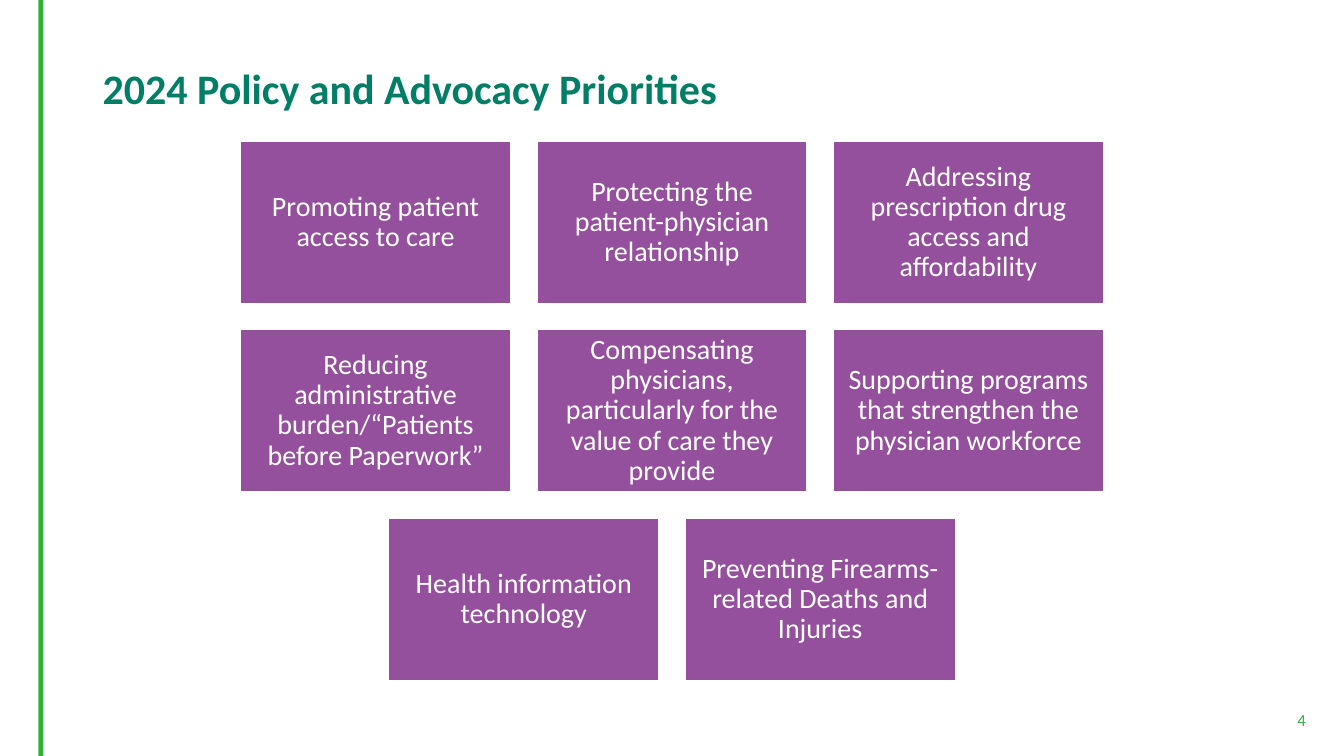
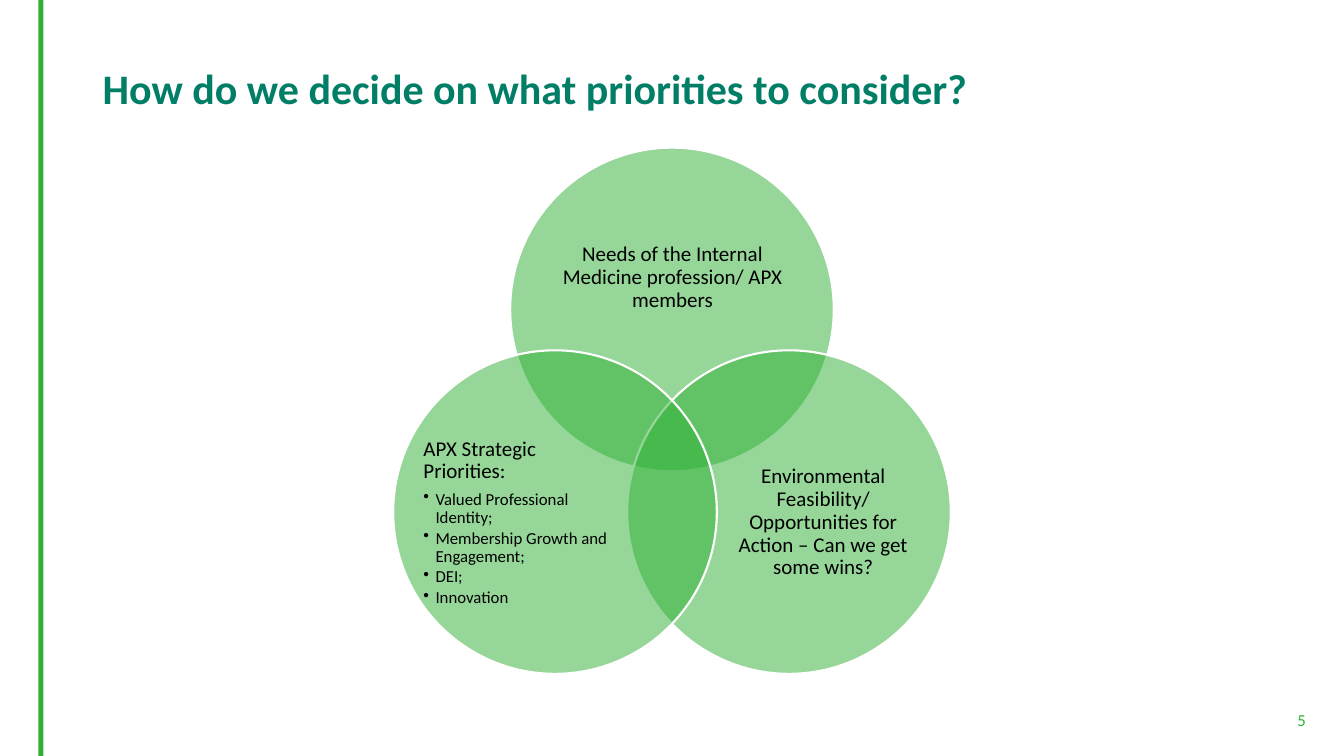
from dataclasses import dataclass
from math import cos, radians, sin

from lxml import etree
from pptx import Presentation
from pptx.dml.color import RGBColor
from pptx.enum.shapes import MSO_SHAPE
from pptx.enum.text import MSO_ANCHOR, PP_ALIGN
from pptx.oxml.ns import qn
from pptx.util import Inches, Pt

RECTANGLE, OVAL = MSO_SHAPE.RECTANGLE, MSO_SHAPE.OVAL
MIDDLE, BOTTOM = MSO_ANCHOR.MIDDLE, MSO_ANCHOR.BOTTOM
LEFT, CENTER, RIGHT = PP_ALIGN.LEFT, PP_ALIGN.CENTER, PP_ALIGN.RIGHT

SLIDE_WIDTH, SLIDE_HEIGHT = 13.33, 7.5


@dataclass(frozen=True)
class Theme:
    font: str = "Calibri"
    green: RGBColor = RGBColor(0x2E, 0xB1, 0x35)
    teal: RGBColor = RGBColor(0x00, 0x7E, 0x66)
    purple: RGBColor = RGBColor(0x95, 0x50, 0x9D)
    white: RGBColor = RGBColor(0xFF, 0xFF, 0xFF)
    black: RGBColor = RGBColor(0x00, 0x00, 0x00)
    title_size: int = 30
    card_size: int = 20
    label_size: int = 15
    small_size: int = 12
    line_spacing: float = 0.9
    label_gap: float = 0.35  # share of the type size
    bullet_gap: float = 0.15


class Deck:
    def __init__(self, theme):
        self.theme = theme
        self.presentation = Presentation()
        self.presentation.slide_width = Inches(SLIDE_WIDTH)
        self.presentation.slide_height = Inches(SLIDE_HEIGHT)
        self.slide = None

    def add_slide(self, title, number):
        """Start a slide with the side rail, title and page number."""
        theme = self.theme
        self.slide = self.presentation.slides.add_slide(self.presentation.slide_layouts[6])
        self.shape(RECTANGLE, (0.38, 0, 0.05, SLIDE_HEIGHT), theme.green)
        heading = self.text_frame((0.92, 0.4, 11.5, 1))
        self.set_text(heading.paragraphs[0], title, theme.title_size, theme.teal, bold=True)
        footer = self.text_frame((9.57, 6.99, 3.48, 0.3), anchor=BOTTOM)
        self.set_text(footer.paragraphs[0], str(number), theme.small_size, theme.green, RIGHT)

    def shape(self, kind, box, fill, line_width=0):
        shape = self.slide.shapes.add_shape(kind, *map(Inches, box))
        shape.shadow.inherit = False
        shape.fill.solid()
        shape.fill.fore_color.rgb = fill
        if line_width:
            shape.line.color.rgb = self.theme.white
            shape.line.width = Pt(line_width)
        else:
            shape.line.fill.background()
        return shape

    def text_frame(self, box, anchor=MIDDLE, inset=None):
        frame = self.slide.shapes.add_textbox(*map(Inches, box)).text_frame
        self.set_frame(frame, anchor, inset)
        return frame

    def set_frame(self, frame, anchor=MIDDLE, inset=None):
        frame.word_wrap = True
        frame.vertical_anchor = anchor
        if inset is not None:
            frame.margin_left = frame.margin_right = Inches(inset)
            frame.margin_top = frame.margin_bottom = Inches(inset)

    def set_text(self, paragraph, text, size, color, align=LEFT, bold=False, gap=0):
        paragraph.text = text
        paragraph.alignment = align
        paragraph.line_spacing = self.theme.line_spacing
        paragraph.space_after = Pt(size * gap)
        for run in paragraph.runs:
            run.font.name = self.theme.font
            run.font.size = Pt(size)
            run.font.bold = bold
            run.font.color.rgb = color

    def card(self, box, text):
        theme = self.theme
        frame = self.shape(RECTANGLE, box, theme.purple, line_width=1).text_frame
        self.set_frame(frame, inset=0.08)
        self.set_text(frame.paragraphs[0], text, theme.card_size, theme.white, CENTER)

    def circle(self, center_x, center_y, diameter):
        """Add a half-transparent circle around a centre."""
        box = (center_x - diameter / 2, center_y - diameter / 2, diameter, diameter)
        circle = self.shape(OVAL, box, self.theme.green, line_width=1.5)
        color = circle.element.spPr.find(qn("a:solidFill"))[0]
        etree.SubElement(color, qn("a:alpha"), val="50000")

    def label(self, box, text, bullets=()):
        theme = self.theme
        frame = self.text_frame(box, inset=0)
        self.set_text(frame.paragraphs[0], text, theme.label_size, theme.black,
                      LEFT if bullets else CENTER, gap=theme.label_gap if bullets else 0)
        for bullet in bullets:
            paragraph = frame.add_paragraph()
            self.set_text(paragraph, bullet, theme.small_size, theme.black, gap=theme.bullet_gap)
            properties = paragraph._p.get_or_add_pPr()
            properties.set("marL", str(Inches(0.12)))
            properties.set("indent", str(Inches(-0.12)))
            etree.SubElement(properties, qn("a:buChar"), char="•")


def build_priorities(deck):
    deck.add_slide("2024 Policy and Advocacy Priorities", 4)
    card_width, card_height, gap, top = 2.68, 1.61, 0.26, 1.4
    priority_rows = [
        ["Promoting patient access to care",
         "Protecting the patient-physician relationship",
         "Addressing prescription drug access and affordability"],
        ["Reducing administrative burden/“Patients before Paperwork”",
         "Compensating physicians, particularly for the value of care they provide",
         "Supporting programs that strengthen the physician workforce"],
        ["Health information technology",
         "Preventing Firearms-related Deaths and Injuries"],
    ]
    for row, priorities in enumerate(priority_rows):
        row_width = len(priorities) * (card_width + gap) - gap
        left = (SLIDE_WIDTH - row_width) / 2
        for column, priority in enumerate(priorities):
            deck.card((left + column * (card_width + gap), top + row * (card_height + gap),
                       card_width, card_height), priority)


def build_criteria(deck):
    deck.add_slide("How do we decide on what priorities to consider?", 5)
    center_x, center_y, spread, diameter = SLIDE_WIDTH / 2, 4.41, 1.34, 3.21
    criteria = [
        (-90, (5.49, 2.03, 2.36, 1.45),
         "Needs of the Internal Medicine profession/ APX members", ()),
        (30, (7.2, 4.3, 1.93, 1.77),
         "Environmental Feasibility/ Opportunities for Action – Can we get some wins?", ()),
        (150, (4.2, 4.3, 1.93, 1.77), "APX Strategic Priorities:",
         ("Valued Professional Identity;", "Membership Growth and Engagement;",
          "DEI;", "Innovation")),
    ]
    for angle, label_box, text, bullets in criteria:
        deck.circle(center_x + spread * cos(radians(angle)),
                    center_y + spread * sin(radians(angle)), diameter)
        deck.label(label_box, text, bullets)


def main():
    deck = Deck(Theme())
    build_priorities(deck)
    build_criteria(deck)
    deck.presentation.save("out.pptx")


if __name__ == "__main__":
    main()
